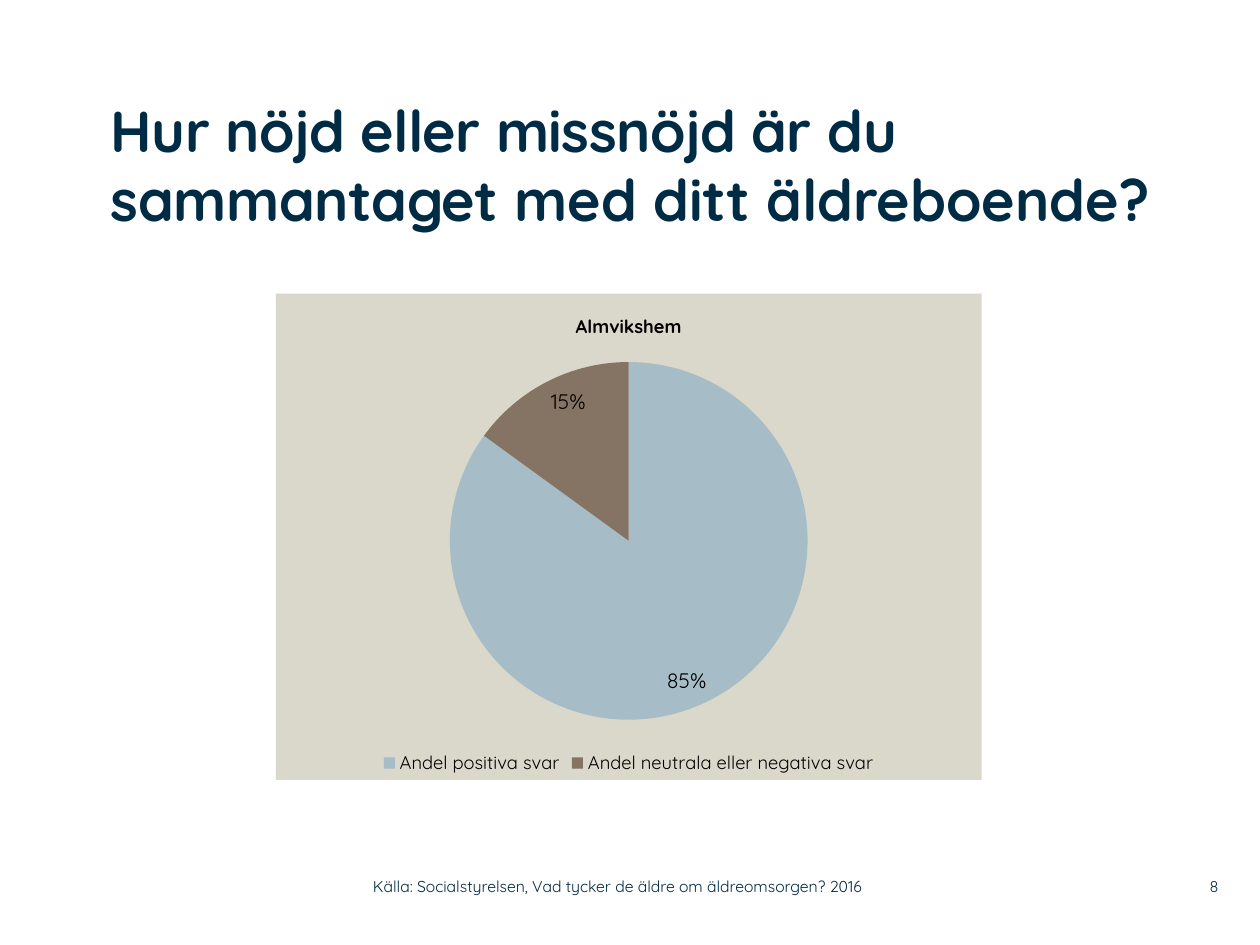
from pptx import Presentation
from pptx.chart.data import CategoryChartData
from pptx.dml.color import RGBColor
from pptx.enum.chart import XL_CHART_TYPE, XL_LABEL_POSITION, XL_LEGEND_POSITION
from pptx.enum.text import MSO_ANCHOR, MSO_AUTO_SIZE, PP_ALIGN
from pptx.oxml import parse_xml
from pptx.oxml.ns import nsdecls
from pptx.util import Inches, Pt

PIE = XL_CHART_TYPE.PIE
INSIDE_END = XL_LABEL_POSITION.INSIDE_END
BOTTOM = XL_LEGEND_POSITION.BOTTOM
TOP, MIDDLE = MSO_ANCHOR.TOP, MSO_ANCHOR.MIDDLE
LEFT, RIGHT = PP_ALIGN.LEFT, PP_ALIGN.RIGHT
NO_AUTOFIT = MSO_AUTO_SIZE.NONE

NAVY = RGBColor(0x00, 0x2B, 0x45)
BLACK = RGBColor(0x00, 0x00, 0x00)
SAND = RGBColor(0xDA, 0xD7, 0xCB)
LIGHT_BLUE = RGBColor(0xA6, 0xBC, 0xC6)
BROWN = RGBColor(0x85, 0x73, 0x63)
FONT_NAME = "Quicksand"


def format_font(font, size, color, bold=False):
    values = {"name": FONT_NAME, "size": Pt(size), "bold": bold}
    for name, value in values.items():
        setattr(font, name, value)
    font.color.rgb = color


def format_frame(frame, anchor):
    """Remove the margins and fix the wrapping and anchor of a text frame."""
    values = {
        "margin_left": 0, "margin_top": 0, "margin_right": 0, "margin_bottom": 0,
        "word_wrap": True, "auto_size": NO_AUTOFIT, "vertical_anchor": anchor,
    }
    for name, value in values.items():
        setattr(frame, name, value)


presentation = Presentation()
presentation.slide_width = Inches(10)
presentation.slide_height = Inches(7.5)
slide = presentation.slides.add_slide(presentation.slide_layouts[5])

# Title
title = slide.shapes.title
title.left, title.top = Inches(0.88), Inches(0.75)
title.width, title.height = Inches(8.83), Inches(1.42)
format_frame(title.text_frame, TOP)
paragraph = title.text_frame.paragraphs[0]
paragraph.alignment = LEFT
for text, spacing in [
    ("Hur nöjd eller missnöjd är du sammantaget ", "-30"),
    ("med ditt äldreboende?", "0"),
]:
    run = paragraph.add_run()
    run.text = text
    format_font(run.font, 33, NAVY, bold=True)
    run._r.get_or_add_rPr().set("spc", spacing)

# Pie chart
chart_data = CategoryChartData(number_format="0")
chart_data.categories = ["Andel positiva svar", "Andel neutrala eller negativa svar"]
chart_data.add_series("Series 1", (85, 15))
chart = slide.shapes.add_chart(
    PIE, Inches(2.19), Inches(2.33), Inches(5.6), Inches(3.86), chart_data
).chart
format_font(chart.font, 18, BLACK)

chart.has_title = True
chart.chart_title.include_in_layout = False
chart.chart_title.text_frame.text = "Almvikshem"
title_run = chart.chart_title.text_frame.paragraphs[0].runs[0]
format_font(title_run.font, 10.5, BLACK, bold=True)

chart.has_legend = True
chart.legend.position = BOTTOM
chart.legend.include_in_layout = False
format_font(chart.legend.font, 10.5, BLACK)

plot = chart.plots[0]
plot.vary_by_categories = True
for index, color in enumerate([LIGHT_BLUE, BROWN]):
    fill = plot.series[0].points[index].format.fill
    fill.solid()
    fill.fore_color.rgb = color

labels = plot.series[0].data_labels
labels.show_value = False
labels.show_percentage = True
labels.number_format = "0%"
labels.number_format_is_linked = False
labels.position = INSIDE_END
format_font(labels.font, 12, BLACK)

# Chart background, which belongs right after the c:chart element
chart_background = parse_xml(
    f'<c:spPr {nsdecls("c", "a")}><a:solidFill><a:srgbClr val="{SAND}"/></a:solidFill>'
    "<a:ln><a:noFill/></a:ln></c:spPr>"
)
chart._chartSpace.chart.addnext(chart_background)

# Source and page number
for left, width, alignment, text in [
    (2.96, 4.43, LEFT, "Källa: Socialstyrelsen, Vad tycker de äldre om äldreomsorgen? 2016"),
    (9.2, 0.47, RIGHT, "8"),
]:
    box = slide.shapes.add_textbox(Inches(left), Inches(6.89), Inches(width), Inches(0.29))
    format_frame(box.text_frame, MIDDLE)
    paragraph = box.text_frame.paragraphs[0]
    paragraph.text = text
    paragraph.alignment = alignment
    format_font(paragraph.font, 9, NAVY)

presentation.save("out.pptx")
